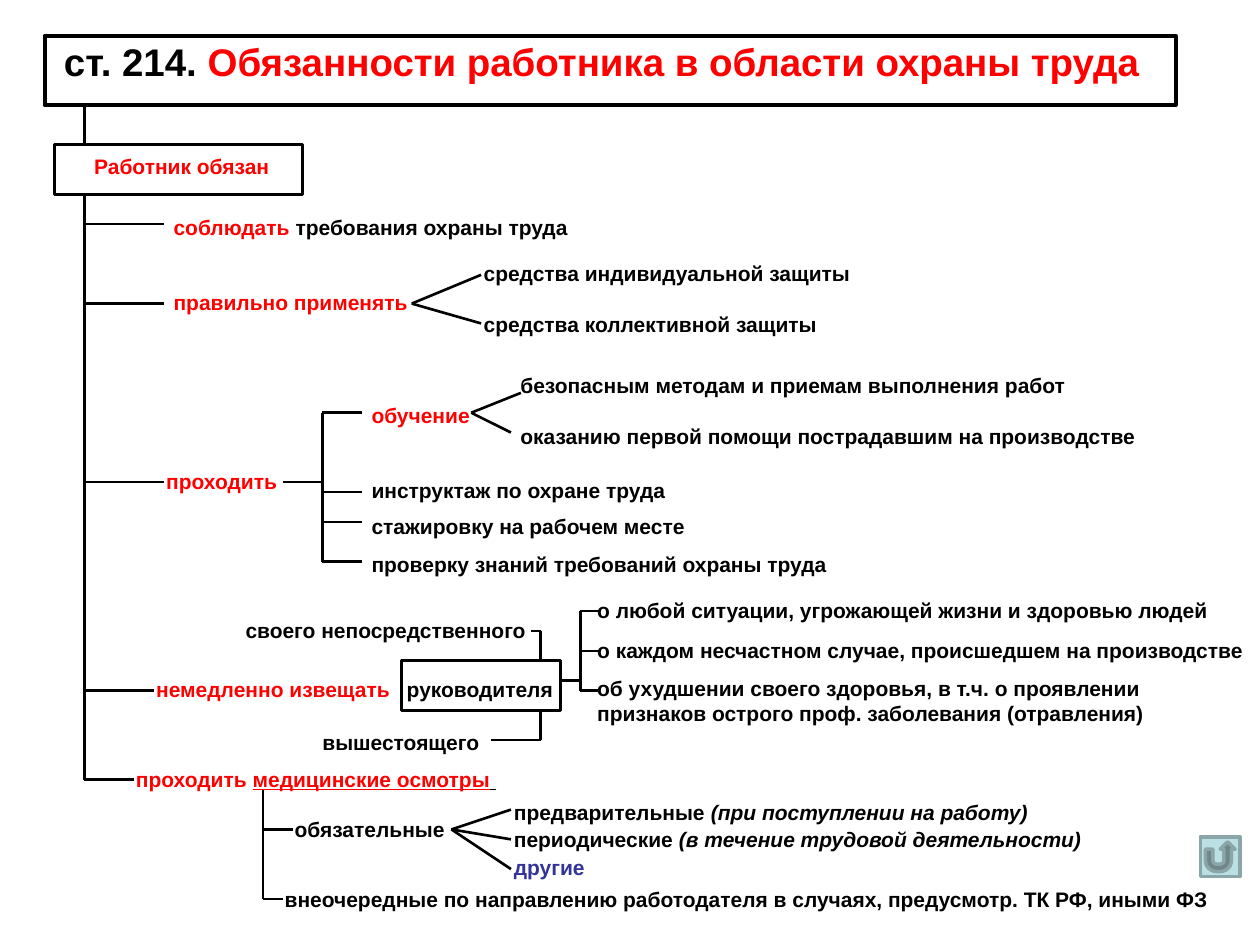
from dataclasses import dataclass

from lxml import etree
from pptx import Presentation
from pptx.dml.color import RGBColor
from pptx.enum.shapes import MSO_CONNECTOR, MSO_SHAPE
from pptx.enum.text import MSO_ANCHOR, MSO_AUTO_SIZE, PP_ALIGN
from pptx.oxml.ns import qn
from pptx.util import Cm, Pt

STRAIGHT = MSO_CONNECTOR.STRAIGHT
RECT = MSO_SHAPE.RECTANGLE
RETURN_BUTTON = MSO_SHAPE.ACTION_BUTTON_RETURN
TOP = MSO_ANCHOR.TOP
LEFT = PP_ALIGN.LEFT
NO_FIT = MSO_AUTO_SIZE.NONE


@dataclass(frozen=True)
class Theme:
    font: str = "Arial"
    title_size: float = 22
    body_size: float = 12
    frame_width: float = 2.25
    line_width: float = 1.5
    button_width: float = 2
    black: RGBColor = RGBColor(0, 0, 0)
    red: RGBColor = RGBColor(0xFF, 0, 0)
    blue: RGBColor = RGBColor(0x33, 0x33, 0x99)
    button: RGBColor = RGBColor(0xBB, 0xE0, 0xE3)
    button_edge: RGBColor = RGBColor(0x8A, 0xA6, 0xA8)


THEME = Theme()


@dataclass(frozen=True)
class Span:
    text: str
    color: RGBColor = THEME.black
    italic: bool = False
    underline: bool = False


@dataclass(frozen=True)
class Para:
    spans: tuple[Span, ...]
    before: float = 0


@dataclass(frozen=True)
class Label:
    left: float
    top: float
    width: float
    height: float
    paras: tuple[Para, ...]
    spacing: float = 1.0


@dataclass(frozen=True)
class Comb:
    """A vertical trunk with horizontal teeth given as (y, end x)."""
    x: float
    top: float
    bottom: float
    teeth: tuple[tuple[float, float], ...]


@dataclass(frozen=True)
class Fan:
    """Rays from one point to several end points."""
    x: float
    y: float
    ends: tuple[tuple[float, float], ...]


def plain(text: str, before: float = 0, color: RGBColor = THEME.black) -> Para:
    return Para((Span(text, color),), before)


def red(text: str) -> Para:
    return plain(text, color=THEME.red)


def fill_text(tf, paras: tuple[Para, ...], size: float, spacing: float = 1.0) -> None:
    tf.word_wrap = True
    tf.auto_size = NO_FIT
    tf.vertical_anchor = TOP
    tf.margin_left = tf.margin_right = Cm(0.25)
    tf.margin_top = tf.margin_bottom = Cm(0.13)
    for i, para in enumerate(paras):
        p = tf.paragraphs[0] if i == 0 else tf.add_paragraph()
        p.alignment = LEFT
        p.line_spacing = spacing
        p.space_before = Pt(para.before)
        for span in para.spans:
            r = p.add_run()
            r.text = span.text
            r.font.name = THEME.font
            r.font.size = Pt(size)
            r.font.bold = True
            r.font.italic = span.italic
            r.font.underline = span.underline
            r.font.color.rgb = span.color


def add_label(s, label: Label) -> None:
    sp = s.shapes.add_textbox(Cm(label.left), Cm(label.top), Cm(label.width), Cm(label.height))
    fill_text(sp.text_frame, label.paras, THEME.body_size, label.spacing)


def add_frame(s, left: float, top: float, width: float, height: float, line: float) -> None:
    sp = s.shapes.add_shape(RECT, Cm(left), Cm(top), Cm(width), Cm(height))
    sp.shadow.inherit = False
    sp.fill.background()
    sp.line.color.rgb = THEME.black
    sp.line.width = Pt(line)


def add_line(s, x1: float, y1: float, x2: float, y2: float) -> None:
    line = s.shapes.add_connector(STRAIGHT, Cm(x1), Cm(y1), Cm(x2), Cm(y2))
    line.line.color.rgb = THEME.black
    line.line.width = Pt(THEME.line_width)
    etree.SubElement(line._element.spPr, qn("a:effectLst"))


def add_comb(s, comb: Comb) -> None:
    add_line(s, comb.x, comb.top, comb.x, comb.bottom)
    for y, end in comb.teeth:
        add_line(s, comb.x, y, end, y)


def add_fan(s, fan: Fan) -> None:
    for x, y in fan.ends:
        add_line(s, fan.x, fan.y, x, y)


LABELS = (
    Label(1.65, 2.97, 4.19, 0.76, (red("Работник обязан"),)),
    Label(3.25, 4.19, 8.51, 2.29, (
        Para((Span("соблюдать", THEME.red), Span(" требования охраны труда"))),
        plain("правильно применять", 28.8, THEME.red))),
    Label(9.5, 5.13, 7.92, 1.78, (
        plain("средства индивидуальной защиты"),
        plain("средства коллективной защиты", 14.4))),
    Label(3.1, 9.32, 2.9, 0.76, (red("проходить"),)),
    Label(7.24, 7.98, 9.75, 3.76, (
        red("обучение"),
        plain("инструктаж по охране труда", 28.8),
        plain("стажировку на рабочем месте", 6.2),
        plain("проверку знаний требований охраны труда", 7))),
    Label(10.24, 7.39, 13.08, 1.78, (
        plain("безопасным методам и приемам выполнения работ"),
        plain("оказанию первой помощи пострадавшим на производстве", 14.4))),
    Label(2.9, 13.51, 5.4, 0.76, (red("немедленно извещать"),)),
    Label(7.95, 13.51, 3.56, 0.76, (plain("руководителя"),)),
    Label(4.7, 12.32, 6.32, 0.76, (plain("своего непосредственного"),)),
    Label(6.25, 14.58, 3.81, 0.76, (plain("вышестоящего"),)),
    Label(11.79, 11.91, 13.61, 2.84, (
        plain("о любой ситуации, угрожающей жизни и здоровью людей"),
        plain("о каждом несчастном случае, происшедшем на производстве", 8.5),
        plain("об ухудшении своего здоровья, в т.ч. о проявлении", 7.2),
        plain("признаков острого проф. заболевания (отравления)"))),
    Label(2.49, 15.32, 11.28, 0.76, (Para((
        Span("проходить ", THEME.red),
        Span("медицинские осмотры", THEME.red, underline=True),
        Span(" ", underline=True))),)),
    Label(5.69, 16.33, 3.66, 0.76, (plain("обязательные"),)),
    Label(10.11, 15.93, 12.19, 2.1, (
        Para((Span("предварительные "), Span("(при поступлении на работу)", italic=True))),
        Para((Span("периодические "), Span("(в течение трудовой деятельности)", italic=True))),
        plain("другие", color=THEME.blue)), 1.1),
    Label(5.49, 17.75, 19.23, 0.76, (
        plain("внеочередные по направлению работодателя в случаях, предусмотр. ТК РФ, иными ФЗ"),)),
)

COMBS = (
    Comb(1.7, 3.92, 15.72, ((4.52, 3.3), (6.12, 3.3), (9.72, 3.3), (13.92, 3.1), (15.72, 2.7))),
    Comb(6.5, 8.32, 11.32, tuple((y, 7.3) for y in (8.32, 9.92, 10.52, 11.32))),
    Comb(10.9, 12.72, 13.32, ((12.72, 10.7),)),
    Comb(10.9, 14.32, 14.92, ((14.92, 9.9),)),
    Comb(11.7, 12.32, 13.92, tuple((y, 12.1) for y in (12.32, 13.12, 13.92))),
    Comb(5.3, 15.92, 18.12, ((16.72, 5.9), (18.12, 5.7))),
)

FANS = (
    Fan(8.3, 6.12, ((9.7, 5.54), (9.7, 6.52))),
    Fan(9.5, 8.32, ((10.5, 7.92), (10.3, 8.72))),
    Fan(9.1, 16.72, ((10.3, 16.32), (10.3, 16.92), (10.3, 17.52))),
)


def main() -> None:
    prs = Presentation()
    prs.slide_width, prs.slide_height = Cm(25.4), Cm(19.05)
    s = prs.slides.add_slide(prs.slide_layouts[5])

    # Title and its frame
    title = s.shapes.title
    title.left, title.top, title.width, title.height = Cm(1.04), Cm(0.64), Cm(22.43), Cm(1.19)
    fill_text(title.text_frame, (Para((
        Span("ст. 214. "),
        Span("Обязанности работника в области охраны труда", THEME.red))),), THEME.title_size)
    add_frame(s, 0.9, 0.72, 22.8, 1.4, THEME.frame_width)

    # Boxes around the worker and the manager
    add_frame(s, 1.1, 2.92, 5, 1, THEME.line_width)
    add_frame(s, 8.1, 13.32, 3.2, 1, THEME.line_width)

    # Branches
    add_line(s, 1.7, 2.12, 1.7, 2.92)
    add_line(s, 5.7, 9.72, 6.5, 9.72)
    add_line(s, 11.3, 13.72, 11.7, 13.72)
    for comb in COMBS:
        add_comb(s, comb)
    for fan in FANS:
        add_fan(s, fan)

    # Wording
    for label in LABELS:
        add_label(s, label)

    # Return button
    button = s.shapes.add_shape(RETURN_BUTTON, Cm(24.2), Cm(16.87), Cm(0.8), Cm(0.8))
    button.shadow.inherit = False
    button.fill.solid()
    button.fill.fore_color.rgb = THEME.button
    button.line.color.rgb = THEME.button_edge
    button.line.width = Pt(THEME.button_width)

    prs.save("out.pptx")


if __name__ == "__main__":
    main()
